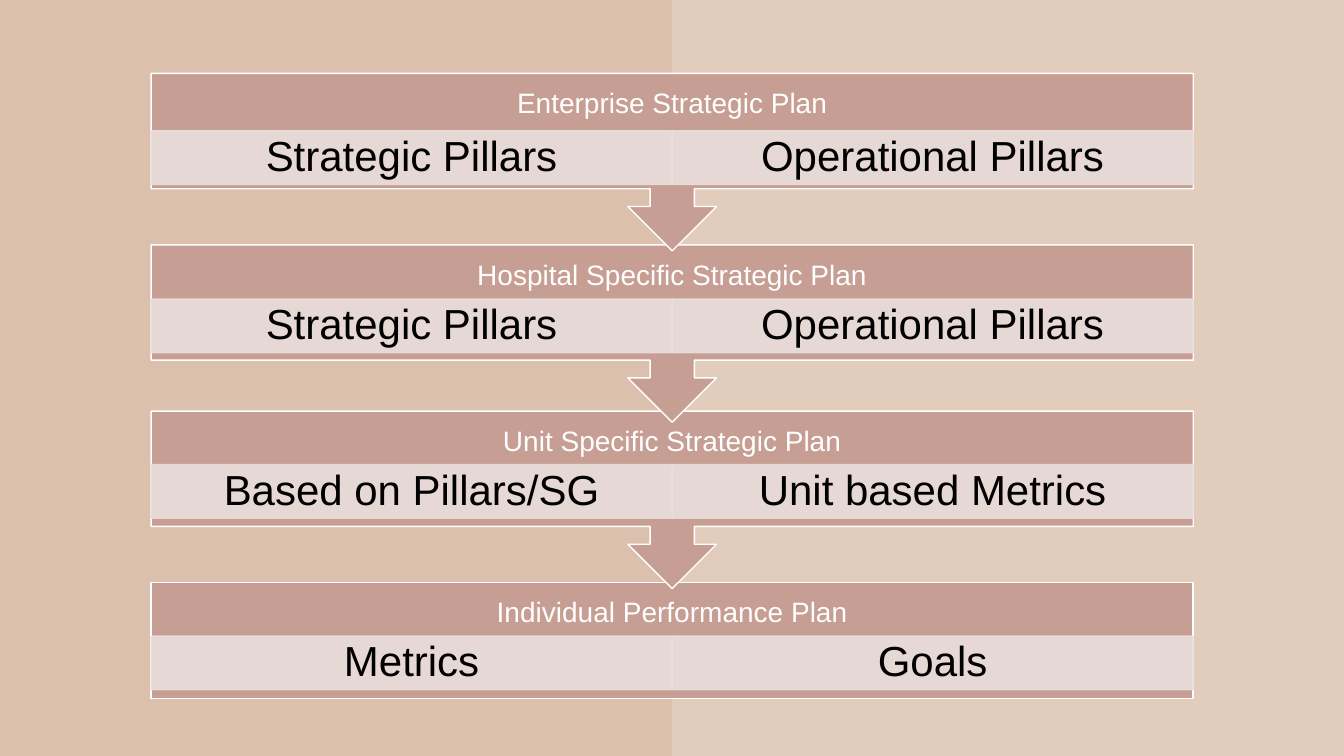
from lxml.etree import SubElement
from pptx import Presentation
from pptx.dml.color import RGBColor
from pptx.enum.shapes import MSO_SHAPE as Shape
from pptx.enum.text import MSO_ANCHOR as Anchor, PP_ALIGN as Align
from pptx.oxml.ns import qn
from pptx.util import Cm, Pt

LEFT, WIDTH, HALF = 3.81, 26.26, 13.13
BOX_HEIGHT, CALLOUT_HEIGHT = 2.92, 4.47
HEADING_HEIGHT, CELL_HEIGHT = 1.57, 1.35
SLIDE_WIDTH, SLIDE_HEIGHT = 33.87, 19.05

PLANS = [
    (1.85, 3.3, "Enterprise Strategic Plan", ("Strategic Pillars", "Operational Pillars")),
    (6.17, 7.54, "Hospital Specific Strategic Plan", ("Strategic Pillars", "Operational Pillars")),
    (10.36, 11.71, "Unit Specific Strategic Plan", ("Based on Pillars/SG", "Unit based Metrics")),
    (14.68, 16.03, "Individual Performance Plan", ("Metrics", "Goals")),
]


def color(value):
    """Turn a hex string into a colour."""
    return RGBColor.from_string(value)


def add_block(page, kind, area, fill, line=None, opacity=100):
    """Add a filled preset shape with an optional outline and opacity."""
    block = page.shapes.add_shape(kind, *map(Cm, area))
    block.shadow.inherit = False
    block.fill.solid()
    block.fill.fore_color.rgb = color(fill)
    if line:
        block.line.color.rgb = color(line)
        block.line.width = Pt(1)
    else:
        block.line.fill.background()
    if opacity < 100:
        for tone in block.element.spPr.iter(qn("a:srgbClr")):
            SubElement(tone, qn("a:alpha"), val=str(opacity * 1000))
    return block


def write(box, text, size, tone, side, edge):
    """Set centred text with the given side and top/bottom insets."""
    frame = box.text_frame
    frame.text = text
    frame.word_wrap = True
    frame.vertical_anchor = Anchor.MIDDLE
    frame.margin_left = frame.margin_right = Cm(side)
    frame.margin_top = frame.margin_bottom = Cm(edge)
    para = frame.paragraphs[0]
    para.alignment = Align.CENTER
    para.line_spacing = 0.9
    font = para.runs[0].font
    font.name = "Arial"
    font.size = Pt(size)
    font.color.rgb = color(tone)


def add_plan(page, top, cell_top, heading, cells, is_last):
    """Add one plan level: its frame, heading and two cells."""
    if is_last:
        add_block(page, Shape.RECTANGLE, (LEFT, top, WIDTH, BOX_HEIGHT), "C69E93", "FFFFFF")
    else:
        callout = add_block(page, Shape.UP_ARROW_CALLOUT,
                            (LEFT, top, WIDTH, CALLOUT_HEIGHT), "C69E93", "FFFFFF")
        callout.rotation = 180
    title = page.shapes.add_textbox(*map(Cm, (LEFT, top, WIDTH, HEADING_HEIGHT)))
    write(title, heading, 20, "FFFFFF", 0.4, 0.4)
    for column, text in enumerate(cells):
        cell = add_block(page, Shape.RECTANGLE,
                         (LEFT + column * HALF, cell_top, HALF, CELL_HEIGHT),
                         "EADFDC", "EADFDC", 90)
        write(cell, text, 30, "000000", 0.58, 0.1)


def main():
    """Build the slide of cascading plans, lowest level first."""
    deck = Presentation()
    deck.slide_width, deck.slide_height = Cm(SLIDE_WIDTH), Cm(SLIDE_HEIGHT)
    page = deck.slides.add_slide(deck.slide_layouts[6])
    page.background.fill.solid()
    page.background.fill.fore_color.rgb = color("E2CDBC")
    add_block(page, Shape.RECTANGLE, (0, 0, SLIDE_WIDTH / 2, SLIDE_HEIGHT), "D5B79F", opacity=50)
    for plan in reversed(PLANS):
        add_plan(page, *plan, is_last=plan is PLANS[-1])
    deck.save("out.pptx")


if __name__ == "__main__":
    main()
